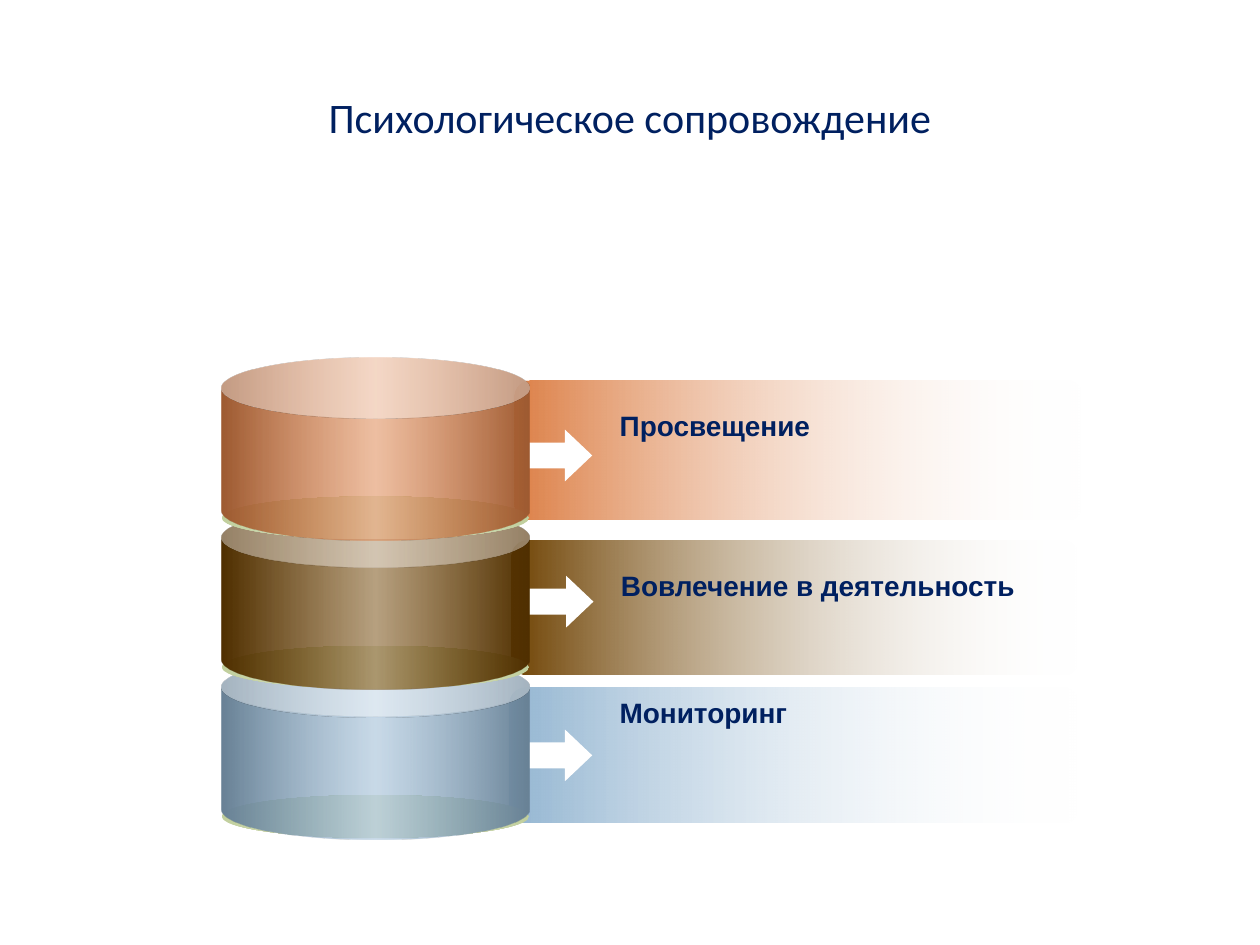
from lxml import etree
from pptx import Presentation
from pptx.dml.color import RGBColor
from pptx.enum.shapes import MSO_SHAPE as SHAPE
from pptx.enum.text import MSO_ANCHOR, MSO_AUTO_SIZE, PP_ALIGN
from pptx.oxml.ns import qn
from pptx.util import Inches, Pt

TITLE = "Психологическое сопровождение"
COLORS = {
    "text": "002060", "white": "FFFFFF",
    "orange": "DD8047", "brown": "704404", "blue": "94B6D2",
    "rim": "C1CF9D", "rim_light": "E7ECDC",
}
STAGES = [
    {"label": "Просвещение", "color": "orange", "band": (4.08, 3.02, 4.51, 1.1),
     "label_at": (4.82, 3.19, 3.82), "arrow_at": (4.19, 3.41)},
    {"label": "Вовлечение в деятельность", "color": "brown", "band": (4.06, 4.29, 4.5, 1.06),
     "label_at": (4.83, 4.46, 3.84), "arrow_at": (4.2, 4.57)},
    {"label": "Мониторинг", "color": "blue", "band": (4.04, 5.46, 4.52, 1.07),
     "label_at": (4.82, 5.47, 3.74), "arrow_at": (4.19, 5.79)},
]
CAN_LEFT, CAN_TOP, CAN_WIDTH, CAN_HEIGHT = 1.76, 2.84, 2.44, 1.45
CAN_STEP, RIM_DROP, RIM_HEIGHT = 1.185, 1.1, 0.34
EDGE_SHADE = 46275


def add_plain(shapes, kind, box, adjustments=()):
    shape = shapes.add_shape(kind, *map(Inches, box))
    shape.shadow.inherit = False
    shape.line.fill.background()
    for index, value in enumerate(adjustments):
        shape.adjustments[index] = value
    return shape


def fill_gradient(shape, stops):
    shape.fill.gradient()
    shape.fill.gradient_angle = 0
    stop_list = shape.fill._fill._gradFill.find(qn("a:gsLst"))
    for stop in list(stop_list):
        stop_list.remove(stop)
    for position, color, effects in stops:
        stop = etree.SubElement(stop_list, qn("a:gs"), pos=str(position * 1000))
        rgb = etree.SubElement(stop, qn("a:srgbClr"), val=COLORS[color])
        for effect, value in effects.items():
            etree.SubElement(rgb, qn(f"a:{effect}"), val=str(value))


def write(frame, text, size, font, bold=False):
    run = frame.paragraphs[0].add_run()
    run.text = text
    run.font.size = Pt(size)
    run.font.name = font
    run.font.bold = bold
    run.font.color.rgb = RGBColor.from_string(COLORS["text"])


def add_can(shapes, top, color):
    parts = shapes.add_group_shape().shapes
    rim = add_plain(parts, SHAPE.OVAL, (CAN_LEFT, top + RIM_DROP, CAN_WIDTH, RIM_HEIGHT))
    fill_gradient(rim, [(0, "rim", {}), (50, "rim_light", {}), (100, "rim", {})])
    can = add_plain(parts, SHAPE.CAN, (CAN_LEFT, top, CAN_WIDTH, CAN_HEIGHT), [0.332])
    edge = {"shade": EDGE_SHADE}
    fill_gradient(can, [(0, color, edge), (50, color, {"alpha": 50000}), (100, color, edge)])


def main():
    deck = Presentation()
    deck.slide_width, deck.slide_height = Inches(10), Inches(7.5)
    slide = deck.slides.add_slide(deck.slide_layouts[5])
    shapes = slide.shapes

    title = shapes.title
    title.left, title.top, title.width, title.height = map(Inches, (0.5, 0.3, 9, 1.25))
    title.text_frame.vertical_anchor = MSO_ANCHOR.MIDDLE
    title.text_frame.paragraphs[0].alignment = PP_ALIGN.CENTER
    write(title.text_frame, TITLE, 24, "Calibri")

    for stage in STAGES:
        band = add_plain(shapes, SHAPE.ROUNDED_RECTANGLE, stage["band"], [0.115])
        fill_gradient(band, [(0, stage["color"], {}), (100, "white", {"alpha": 0})])

    for stage in STAGES:
        label = shapes.add_textbox(*map(Inches, (*stage["label_at"], 0.37))).text_frame
        label.word_wrap = True
        label.auto_size = MSO_AUTO_SIZE.SHAPE_TO_FIT_TEXT
        write(label, stage["label"], 16, "Arial", bold=True)

    for stage in STAGES:
        arrow = add_plain(shapes, SHAPE.RIGHT_ARROW, (*stage["arrow_at"], 0.51, 0.41), [0.5, 0.527])
        arrow.fill.solid()
        arrow.fill.fore_color.rgb = RGBColor.from_string(COLORS["white"])

    for level, stage in reversed(list(enumerate(STAGES))):
        add_can(shapes, CAN_TOP + level * CAN_STEP, stage["color"])

    deck.save("out.pptx")


if __name__ == "__main__":
    main()
